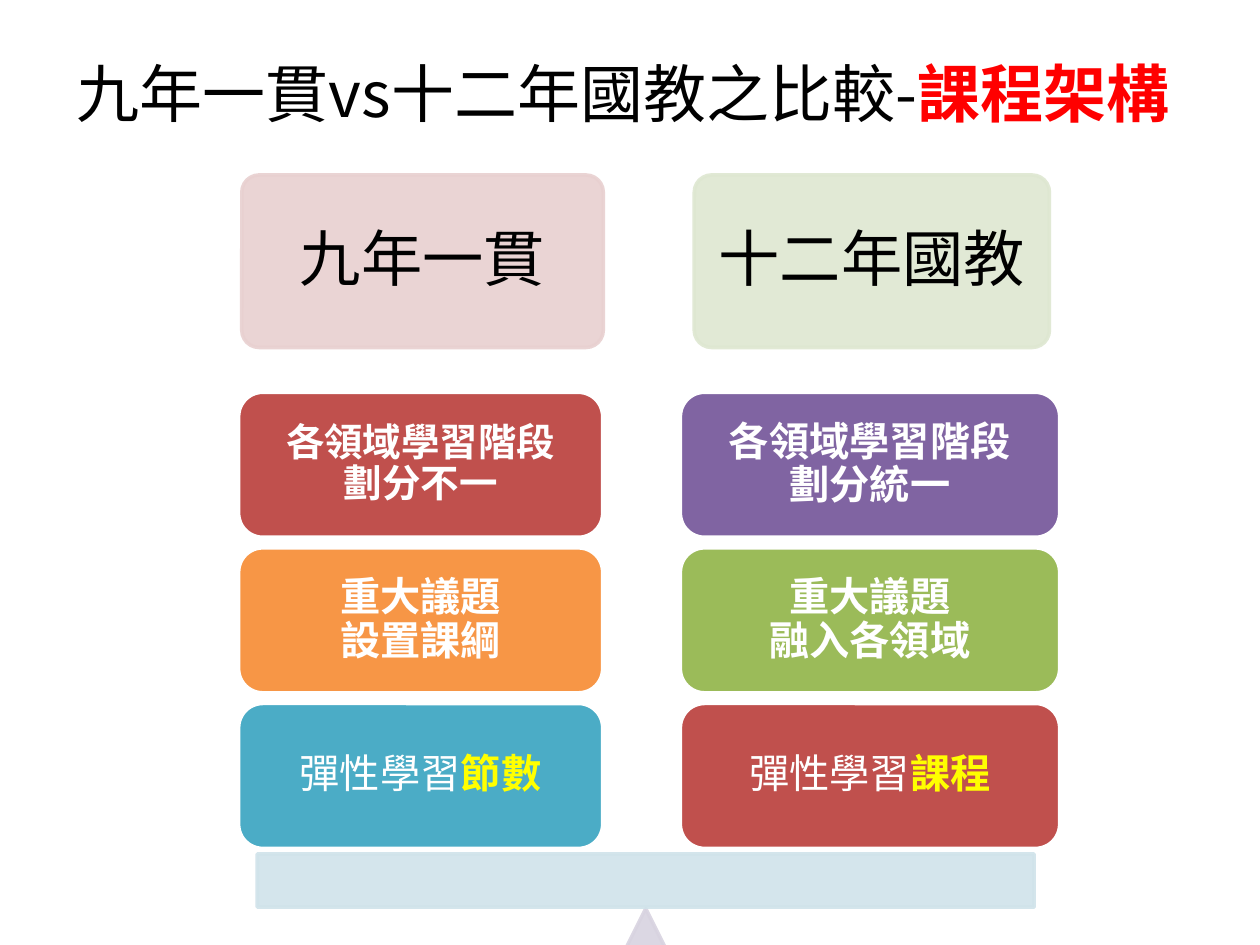
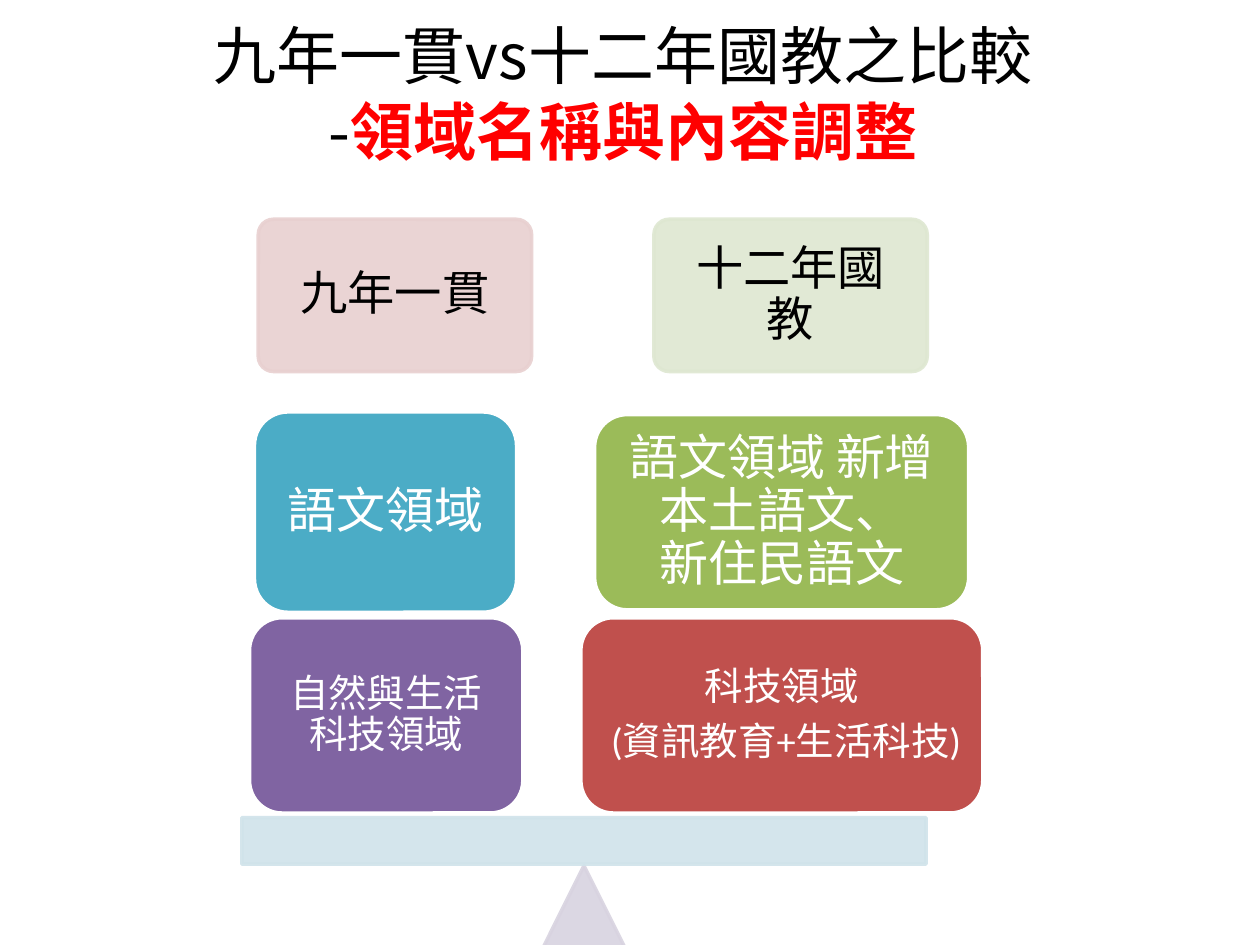
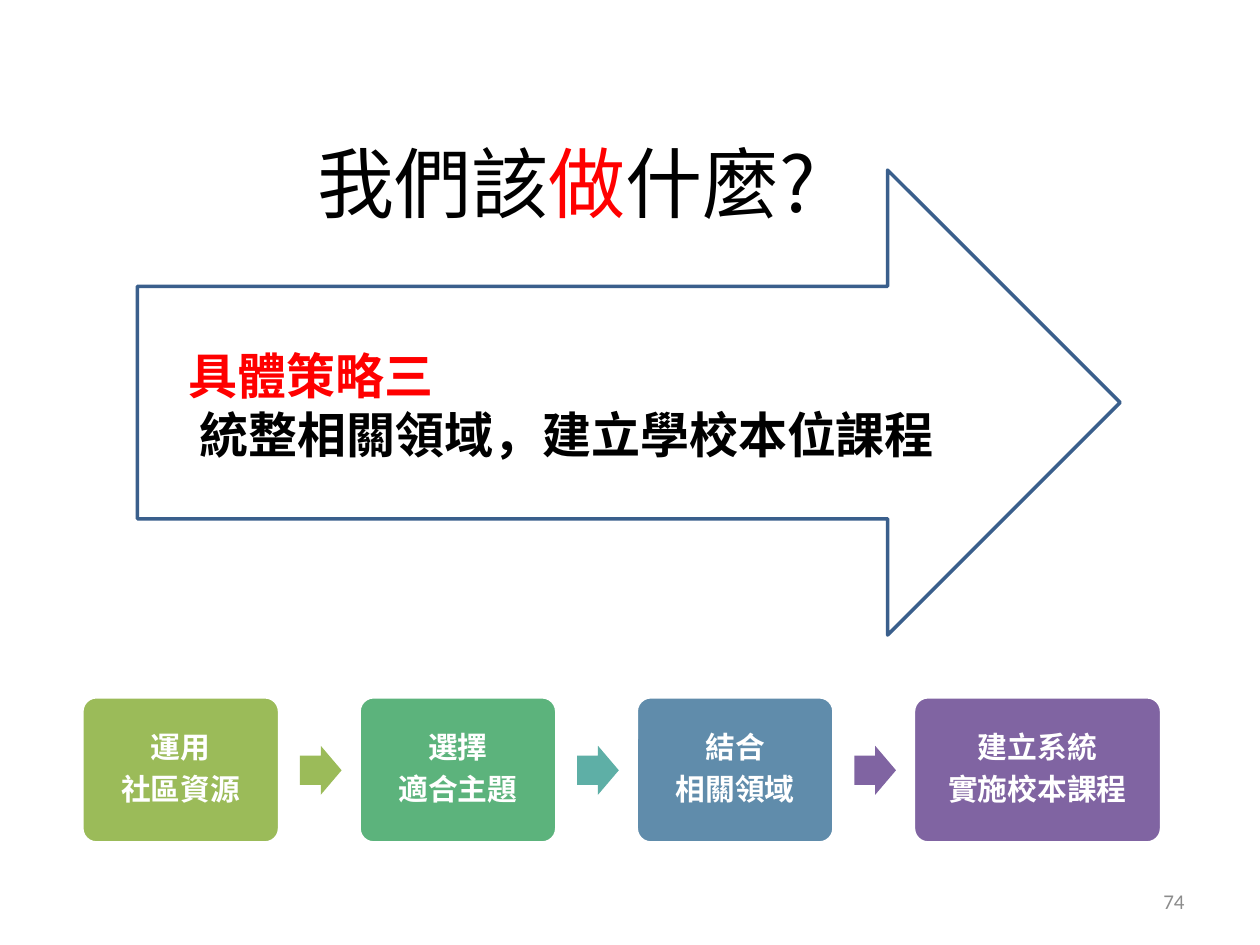
from pptx import Presentation
from pptx.dml.color import RGBColor
from pptx.enum import shapes, text
from pptx.oxml import parse_xml
from pptx.oxml.ns import nsdecls
from pptx.util import Pt

BLACK = RGBColor(0x00, 0x00, 0x00)
WHITE = RGBColor(0xFF, 0xFF, 0xFF)
FOCUS = RGBColor(0xFF, 0x00, 0x00)
YELLOW = RGBColor(0xFF, 0xFF, 0x00)
GREY = RGBColor(0x8C, 0x8C, 0x8C)
NAVY = RGBColor(0x3A, 0x5F, 0x8C)
BRICK = RGBColor(0xC0, 0x50, 0x4D)
OLIVE = RGBColor(0x9B, 0xBB, 0x59)
PURPLE = RGBColor(0x80, 0x64, 0xA2)
AQUA = RGBColor(0x4B, 0xAC, 0xC6)
ORANGE = RGBColor(0xF7, 0x96, 0x46)
GREEN = RGBColor(0x5C, 0xB3, 0x7C)
TEAL = RGBColor(0x5E, 0xAF, 0xA6)
STEEL = RGBColor(0x60, 0x8C, 0xAB)
ROSE = RGBColor(0xE8, 0xD0, 0xD0)
SAGE = RGBColor(0xDE, 0xE7, 0xD1)
LILAC = RGBColor(0xD8, 0xD3, 0xE0)
ICE = RGBColor(0xD0, 0xE3, 0xEA)

CJK, LATIN = "Noto Sans CJK SC", "Calibri"
KIND = shapes.MSO_SHAPE
ALIGN = text.PP_ALIGN
MIDDLE = text.MSO_ANCHOR.MIDDLE
NAMES = ("九年一貫", "十二年國教")


def add_run(para, words, size, color, bold=False, font=LATIN):
    """Add a run; each line feed in words becomes a line break."""
    for i, part in enumerate(words.split("\n")):
        if i:
            para.add_line_break()
        run = para.add_run()
        run.text = part
        run.font.size, run.font.name = Pt(size), font
        run.font.bold, run.font.color.rgb = bold, color


def fill_text(frame, paras, size, font=LATIN, align=ALIGN.CENTER, tight=False):
    """Write paragraphs, each a list of (words, colour, bold) runs."""
    frame.vertical_anchor = MIDDLE
    for i, runs in enumerate(paras):
        para = frame.add_paragraph() if i else frame.paragraphs[0]
        para.alignment = align
        if tight:
            para.line_spacing = 0.9
            para.space_after = Pt(round(0.35 * size, 1))
        for words, color, bold in runs:
            add_run(para, words, size, color, bold, font)


def add_title(slide, box, size, runs):
    title = slide.shapes.title
    title.left, title.top, title.width, title.height = map(Pt, box)
    title.text_frame.auto_size = text.MSO_AUTO_SIZE.NONE
    title.text_frame.word_wrap = True
    fill_text(title.text_frame, [runs], size, CJK)


def add_shape(slide, kind, box, fill=None, line=None, adj=None, alpha=None):
    shape = slide.shapes.add_shape(kind, *map(Pt, box))
    shape.shadow.inherit = False
    for i, value in enumerate(adj or ()):
        shape.adjustments[i] = value
    if fill is None:
        shape.fill.background()
    else:
        shape.fill.solid()
        shape.fill.fore_color.rgb = fill
    if line is None:
        shape.line.fill.background()
    else:
        shape.line.color.rgb = line
        shape.line.width = Pt(2)
    if alpha:
        for clr in shape._element.spPr.xpath(".//a:srgbClr"):
            clr.append(parse_xml(f'<a:alpha {nsdecls("a")} val="{alpha * 1000}"/>'))
    return shape


def add_tile(slide, box, fill, paras, size, font=LATIN, line=WHITE, **look):
    """Rounded tile whose padding follows the text size."""
    frame = add_shape(slide, KIND.ROUNDED_RECTANGLE, box, fill, line, **look).text_frame
    frame.word_wrap = True
    pad = Pt(round(0.31 * size, 1))
    frame.margin_left = frame.margin_right = pad
    frame.margin_top = frame.margin_bottom = pad
    fill_text(frame, paras, size, font, tight=True)


def add_scale(slide, heads, size, beam, side):
    """Two headings, and a beam resting on a triangle."""
    for name, box, tint in zip(NAMES, heads, (ROSE, SAGE)):
        add_tile(slide, box, tint, [[(name, BLACK, False)]], size,
                 line=tint, adj=[0.1], alpha=90)
    left, top, width, height = beam
    pivot = (left + width / 2 - side / 2, top + height + 0.8, side, side)
    add_shape(slide, KIND.ISOSCELES_TRIANGLE, pivot, LILAC, LILAC, alpha=90)
    add_shape(slide, KIND.RECTANGLE, beam, ICE, ICE, alpha=90)


def add_note(slide, box, paras, size, font, align, wrap=True):
    frame = slide.shapes.add_textbox(*map(Pt, box)).text_frame
    frame.word_wrap = wrap
    fill_text(frame, paras, size, font, align)


def add_versus(slide, lead, topic):
    add_title(slide, (28, 21.6, 656, 62.6), 36,
              [(lead, BLACK, False), (topic, FOCUS, True)])


def build_frame(slide):
    """Comparison of the course structure."""
    add_versus(slide, "九年一貫vs十二年國教之比較-", "課程架構")
    add_scale(slide, [(138.2, 100, 206.6, 98.6), (396.7, 100, 203, 98.6)], 35,
              (147, 488, 444, 30.4), 74)
    flex = ("彈性學習", WHITE, False)
    columns = [
        (136.4, 208, [
            (BRICK, 22, [("各領域學習階段\n劃分不一", WHITE, True)]),
            (ORANGE, 23, [("重大議題\n設置課綱", WHITE, True)]),
            (AQUA, 23, [flex, ("節數", YELLOW, True)])]),
        (388.8, 216.7, [
            (PURPLE, 23, [("各領域學習階段\n劃分統一", WHITE, True)]),
            (OLIVE, 23, [("重大議題\n融入各領域", WHITE, True)]),
            (BRICK, 23, [flex, ("課程", YELLOW, True)])]),
    ]
    for left, width, tiles in columns:
        for row, (fill, size, runs) in enumerate(tiles):
            add_tile(slide, (left, 224.2 + 88.9 * row, width, 82.8), fill, [runs], size)


def build_fields(slide):
    """Comparison of the learning fields."""
    add_versus(slide, "九年一貫vs十二年國教之比較\n-", "領域名稱與內容調整")
    add_scale(slide, [(x, 125.3, 156.2, 87) for x in (147.6, 373.7)], 27,
              (138.2, 467.3, 391, 26.6), 65.5)
    tiles = [
        ((145.4, 235.4, 149.8, 114.5), AQUA, 28, ["語文領域"]),
        ((142.6, 353, 156.2, 111.6), PURPLE, 22, ["自然與生活科技領域"]),
        ((339.8, 236.9, 213.8, 111.6), OLIVE, 28, ["語文領域 新增\n本土語文、\n新住民語文"]),
        ((331.9, 353, 229.7, 111.6), BRICK, 22, ["科技領域", " (資訊教育+生活科技)"]),
    ]
    for box, fill, size, lines in tiles:
        add_tile(slide, box, fill, [[(line, WHITE, False)] for line in lines], size)


def build_plan(slide):
    """Strategy arrow and its four steps."""
    add_title(slide, (0, 59, 648, 90), 44,
              [("我們該", BLACK, False), ("做", FOCUS, False), ("什麼?", BLACK, False)])
    add_note(slide, (516.2, 500.4, 167.8, 28.8), [[("74", GREY, False)]],
             12, LATIN, ALIGN.RIGHT)
    add_shape(slide, KIND.RIGHT_ARROW, (78.5, 97.2, 561.6, 265.7), line=NAVY)
    add_note(slide, (100.8, 193.7, 445.7, 74.9),
             [[("具體策略三", FOCUS, True)],
              [(" 統整相關領域，建立學校本位課程", BLACK, True)]],
             28, CJK, ALIGN.LEFT, wrap=False)
    # Steps, with an arrow after each but the last
    steps = [
        (113, OLIVE, OLIVE, ("運用", "社區資源")),
        (113, GREEN, TEAL, ("選擇", "適合主題")),
        (113, STEEL, PURPLE, ("結合", "相關領域")),
        (141.8, PURPLE, None, ("建立系統", "實施校本課程")),
    ]
    for i, (width, fill, tip, lines) in enumerate(steps):
        left = 46.8 + 158.4 * i
        add_tile(slide, (left, 398.2, width, 83.5), fill,
                 [[(line, WHITE, True)] for line in lines], 17, CJK, adj=[0.1])
        if tip:
            add_shape(slide, KIND.RIGHT_ARROW, (left + 124.6, 426.2, 23.8, 28),
                      tip, adj=[0.6, 0.5])


def main():
    deck = Presentation()
    deck.slide_width, deck.slide_height = Pt(720), Pt(540)
    for build in (build_frame, build_fields, build_plan):
        build(deck.slides.add_slide(deck.slide_layouts[5]))
    deck.save("out.pptx")


if __name__ == "__main__":
    main()
